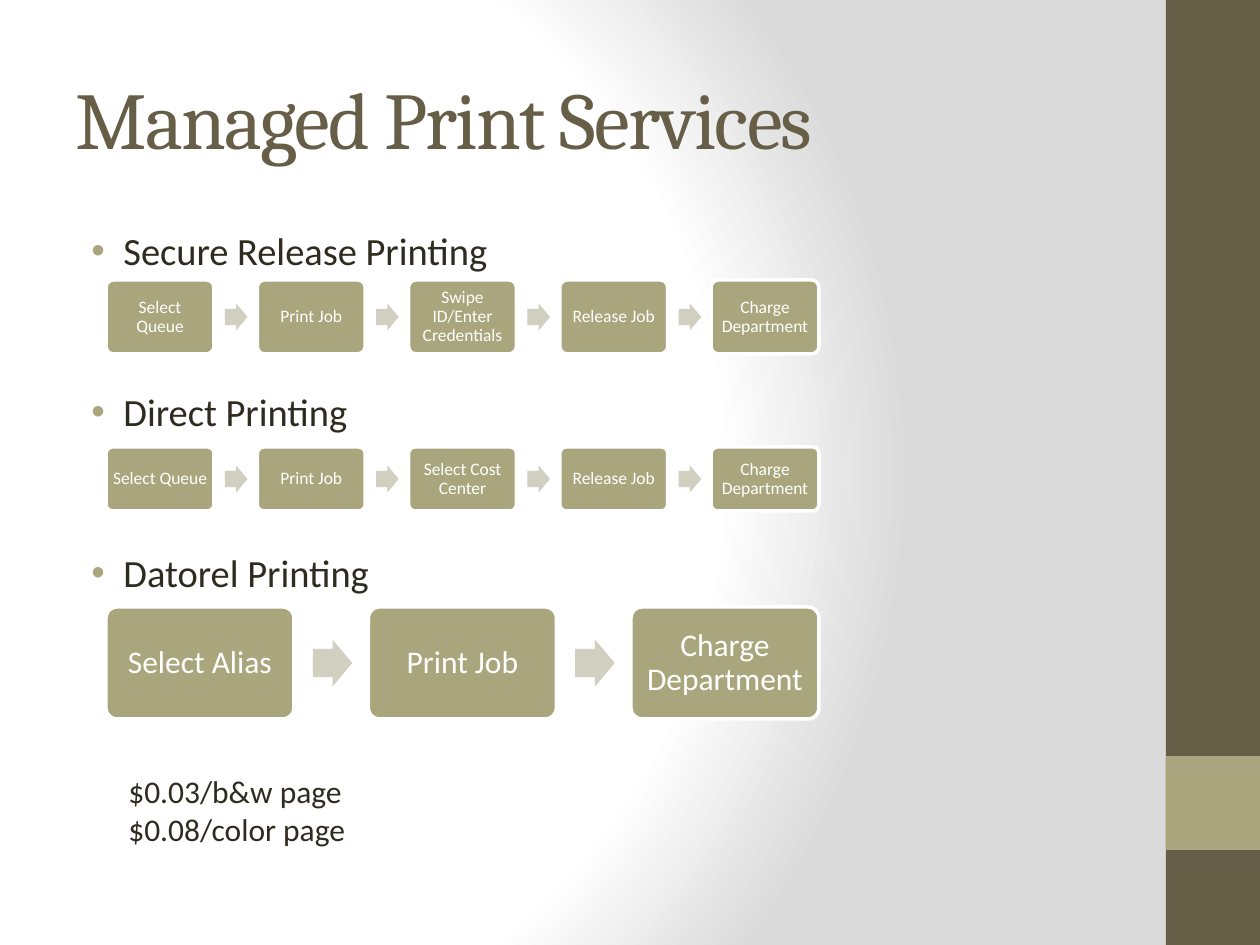
"""Build the Managed Print Services slide with its three process rows."""
from dataclasses import dataclass

from pptx import Presentation
from pptx.dml.color import RGBColor
from pptx.enum.shapes import MSO_SHAPE
from pptx.enum.text import MSO_ANCHOR, PP_ALIGN
from pptx.oxml import parse_xml
from pptx.oxml.ns import qn
from pptx.shapes.autoshape import Shape
from pptx.slide import Slide
from pptx.text.text import TextFrame, _Paragraph
from pptx.util import Emu, Pt

SCALE = 914400 / 126
NS = "http://schemas.openxmlformats.org/drawingml/2006/main"
BROWN, OLIVE, PALE = "675E47", "A9A57C", "D1CFBF"
INK, WHITE, GREY = "2F2B20", "FFFFFF", "DADADA"
LEFT, SPAN = 106, 713


@dataclass
class Row:
    top: int
    width: int
    height: int
    inset: int
    size: int
    steps: list[str]


ROWS = [
    Row(280, 108, 74, 5, 10, ["Select Queue", "Print Job", "Swipe ID/Enter Credentials",
                              "Release Job", "Charge Department"]),
    Row(447, 108, 64, 5, 10, ["Select Queue", "Print Job", "Select Cost Center",
                              "Release Job", "Charge Department"]),
    Row(607, 188, 112, 9, 18, ["Select Alias", "Print Job", "Charge Department"]),
]


def px(count: float) -> Emu:
    """Turn pixels into EMU."""
    return Emu(round(count * SCALE))


def color(code: str) -> RGBColor:
    """Turn a hex string into a colour."""
    return RGBColor.from_string(code)


def style(para: _Paragraph, size: int, code: str, face: str = "Calibri") -> None:
    """Format every run of a paragraph."""
    for run in para.runs:
        run.font.size = Pt(size)
        run.font.name = face
        run.font.color.rgb = color(code)


def block(shapes, kind: MSO_SHAPE, box: tuple, fill: str) -> Shape:
    """Draw a filled shape without line or shadow."""
    shape = shapes.add_shape(kind, *map(px, box))
    shape.shadow.inherit = False
    shape.fill.solid()
    shape.fill.fore_color.rgb = color(fill)
    shape.line.fill.background()
    return shape


def label(slide: Slide, box: tuple, text: str, size: int, code: str,
          face: str = "Calibri") -> TextFrame:
    """Add a wrapped text box."""
    frame = slide.shapes.add_textbox(*map(px, box)).text_frame
    frame.word_wrap = True
    frame.text = text
    for para in frame.paragraphs:
        style(para, size, code, face)
    return frame


def bullet(para: _Paragraph) -> None:
    """Give a paragraph a hanging olive bullet."""
    props = para._p.get_or_add_pPr()
    props.set("marL", str(px(48)))
    props.set("indent", str(-px(32)))
    props.append(parse_xml(f'<a:buClr xmlns:a="{NS}"><a:srgbClr val="{OLIVE}"/></a:buClr>'))
    props.append(parse_xml(f'<a:buFont xmlns:a="{NS}" typeface="Arial"/>'))
    props.append(parse_xml(f'<a:buChar xmlns:a="{NS}" char="•"/>'))


def step(shapes, row: Row, left: float, text: str) -> None:
    """Draw one rounded process step."""
    shape = block(shapes, MSO_SHAPE.ROUNDED_RECTANGLE,
                  (left, row.top, row.width, row.height), OLIVE)
    shape.adjustments[0] = 0.1
    shape.line.color.rgb = color(WHITE)
    shape.line.width = Pt(2)
    frame = shape.text_frame
    frame.word_wrap = True
    frame.vertical_anchor = MSO_ANCHOR.MIDDLE
    frame.margin_left = frame.margin_right = px(row.inset)
    frame.margin_top = frame.margin_bottom = px(row.inset)
    frame.text = text
    para = frame.paragraphs[0]
    para.alignment = PP_ALIGN.CENTER
    para.line_spacing = 0.9
    style(para, row.size, WHITE)


def flow(slide: Slide, row: Row) -> None:
    """Draw a row of steps joined by block arrows."""
    shapes = slide.shapes.add_group_shape().shapes
    pitch = (SPAN - row.width) / (len(row.steps) - 1)
    wide, high = row.width * 0.21, row.width * 0.25
    for index, text in enumerate(row.steps):
        left = LEFT + index * pitch
        if index:
            start = left - pitch + row.width * 1.1
            middle = row.top + row.height / 2
            arrow = block(shapes, MSO_SHAPE.RIGHT_ARROW,
                          (start, middle - high / 2, wide, high), PALE)
            arrow.adjustments[0] = 0.6
            arrow.adjustments[1] = 0.5
        step(shapes, row, left, text)


def shade(slide: Slide) -> None:
    """Give the slide a round white to grey background."""
    slide.background.fill.solid()
    solid = next(slide._element.iter(qn("a:solidFill")))
    stops = "".join(f'<a:gs pos="{pos}000"><a:srgbClr val="{code}"/></a:gs>'
                    for pos, code in ((0, WHITE), (75, WHITE), (100, GREY)))
    solid.getparent().replace(solid, parse_xml(
        f'<a:gradFill xmlns:a="{NS}" rotWithShape="1"><a:gsLst>{stops}</a:gsLst>'
        '<a:path path="circle">'
        '<a:fillToRect l="20000" t="50000" r="100000" b="50000"/></a:path></a:gradFill>'))


def main() -> None:
    """Build and save the slide."""
    deck = Presentation()
    deck.slide_width, deck.slide_height = px(1260), px(945)
    slide = deck.slides.add_slide(deck.slide_layouts[6])
    shade(slide)
    block(slide.shapes, MSO_SHAPE.RECTANGLE, (1166, 0, 94, 945), BROWN)
    block(slide.shapes, MSO_SHAPE.RECTANGLE, (1166, 756, 94, 94), OLIVE)

    title = label(slide, (63, 38, 1050, 158), "Managed Print Services", 46, BROWN, "Cambria")
    title.vertical_anchor = MSO_ANCHOR.MIDDLE
    title.paragraphs[0].runs[0].font._element.set("spc", "-100")

    topics = "Secure Release Printing\nDirect Printing\nDatorel Printing"
    body = label(slide, (63, 221, 1050, 662), topics, 22, INK)
    for index, para in enumerate(body.paragraphs):
        para.space_before = Pt(65.5 if index else 0)
        bullet(para)

    for row in ROWS:
        flow(slide, row)
    label(slide, (116, 766, 955, 89), "$0.03/b&w page\n$0.08/color page", 18, INK)
    deck.save("out.pptx")


if __name__ == "__main__":
    main()
